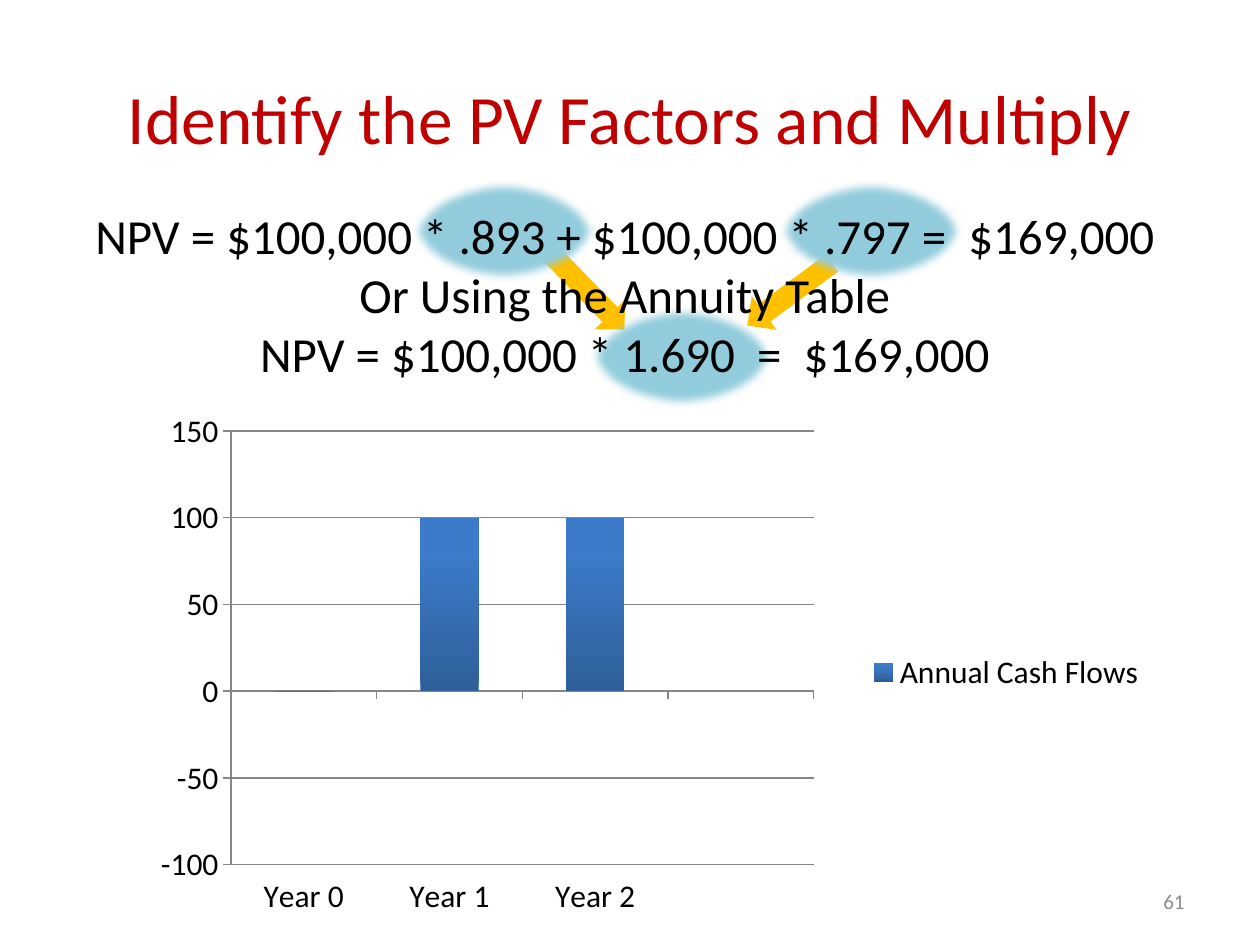
"""Build the slide that multiplies cash flows by their present value factors."""
from lxml import etree
from pptx import Presentation
from pptx import util as u
from pptx.chart import data as chart_data
from pptx.dml import color
from pptx.enum import chart as ch, shapes, text
from pptx.oxml import parse_xml
from pptx.oxml.ns import nsdecls, qn

COLORS = {"title": "C00000", "text": "000000", "number": "8C8C8C", "oval": "93CDDD",
          "arrow": "FFC000", "grid": "868686", "bar_low": "2F5F99", "bar_high": "3C7BC9"}


def rgb(name):
    return color.RGBColor.from_string(COLORS[name])


def apply(target, **values):
    for name, value in values.items():
        setattr(target, name, value)


class SlideBuilder:
    def __init__(self, deck, font="Calibri"):
        self.font = font
        self.slide = deck.slides.add_slide(deck.slide_layouts[5])

    def style(self, font, size, tone):
        apply(font, name=self.font, size=u.Pt(size))
        font.color.rgb = rgb(tone)

    def fill_text(self, box, lines, size, tone, align, anchor):
        frame = box.text_frame
        apply(frame, word_wrap=True, vertical_anchor=anchor, auto_size=text.MSO_AUTO_SIZE.NONE)
        for index, line in enumerate(lines):
            para = frame.paragraphs[0] if index == 0 else frame.add_paragraph()
            para.alignment = align
            span = para.add_run()
            span.text = line
            self.style(span.font, size, tone)

    def title(self, line, left, top, width, height, size):
        box = self.slide.shapes.title
        apply(box, left=u.Pt(left), top=u.Pt(top), width=u.Pt(width), height=u.Pt(height))
        self.fill_text(box, [line], size, "title", text.PP_ALIGN.CENTER, text.MSO_ANCHOR.MIDDLE)

    def text(self, lines, area, size, tone, align, anchor):
        box = self.slide.shapes.add_textbox(*map(u.Pt, area))
        self.fill_text(box, lines, size, tone, align, anchor)

    def shape(self, kind, area, tone, rotation=0, soft_edge=0):
        shape = self.slide.shapes.add_shape(kind, *map(u.Pt, area))
        shape.rotation = rotation
        shape.shadow.inherit = False
        shape.fill.solid()
        shape.fill.fore_color.rgb = rgb(tone)
        shape.line.fill.background()
        if soft_edge:
            effects = shape.element.spPr.find(qn("a:effectLst"))
            etree.SubElement(effects, qn("a:softEdge"), rad=str(u.Pt(soft_edge)))

    def column_chart(self, categories, name, values, area, plot):
        data = chart_data.CategoryChartData(number_format="General")
        data.categories = categories
        data.add_series(name, values)
        chart = self.slide.shapes.add_chart(
            ch.XL_CHART_TYPE.COLUMN_CLUSTERED, *map(u.Pt, area), data).chart
        apply(chart, has_title=False, has_legend=True)
        self.style(chart.font, 18, "text")
        apply(chart.legend, position=ch.XL_LEGEND_POSITION.RIGHT, include_in_layout=False)
        apply(chart.value_axis, minimum_scale=-100, maximum_scale=150, major_unit=50)
        chart.category_axis.tick_label_position = ch.XL_TICK_LABEL_POSITION.LOW
        for axis in (chart.value_axis, chart.category_axis):
            axis.major_tick_mark = ch.XL_TICK_MARK.OUTSIDE
            axis.format.line.color.rgb = rgb("grid")
        chart.value_axis.major_gridlines.format.line.color.rgb = rgb("grid")
        bars = chart.plots[0]
        apply(bars, gap_width=150, vary_by_categories=False)
        fill = bars.series[0].format.fill
        fill.gradient()
        fill.gradient_angle = 90
        for stop, tone, position in zip(fill.gradient_stops, ("bar_low", "bar_high"), (0, 0.8)):
            stop.color.rgb = rgb(tone)
            stop.position = position
        self.place_plot(chart, plot)

    def place_plot(self, chart, plot):
        area = chart.element.chart.plotArea
        for layout in area.findall(qn("c:layout")):
            area.remove(layout)
        modes = '<c:layoutTarget val="inner"/><c:xMode val="edge"/><c:yMode val="edge"/>'
        sizes = "".join(f'<c:{tag} val="{value}"/>' for tag, value in zip("xywh", plot))
        area.insert(0, parse_xml(f'<c:layout {nsdecls("c")}><c:manualLayout>'
                                 f'{modes}{sizes}</c:manualLayout></c:layout>'))


def main():
    deck = Presentation()
    apply(deck, slide_width=u.Pt(720), slide_height=u.Pt(540))
    page = SlideBuilder(deck)
    page.title("Identify the PV Factors and Multiply", 36, 21.6, 648, 90, 39.6)
    for left, top, turn in ((421.2, 156.2, 143.6), (306, 154.8, 45.9)):
        page.shape(shapes.MSO_SHAPE.RIGHT_ARROW, (left, top, 60, 24), "arrow", turn)
    for left, top in ((336, 174), (444, 102), (234, 102)):
        page.shape(shapes.MSO_SHAPE.OVAL, (left, top, 108, 60), "oval", soft_edge=5)
    page.column_chart(["Year 0", "Year 1", "Year 2", ""], "Annual Cash Flows",
                      [0, 100, 100, None], (82, 232.6, 580.3, 303.1),
                      (0.086, 0.045, 0.574, 0.818))
    page.text(["NPV = $100,000 * .893 + $100,000 * .797 =  $169,000",
               "Or Using the Annuity Table",
               "NPV = $100,000 * 1.690  =  $169,000"],
              (24, 114, 666, 108.7), 28, "text", text.PP_ALIGN.CENTER, text.MSO_ANCHOR.TOP)
    page.text(["61"], (516, 500.5, 168, 28.8), 12, "number",
              text.PP_ALIGN.RIGHT, text.MSO_ANCHOR.MIDDLE)
    deck.save("out.pptx")


if __name__ == "__main__":
    main()
